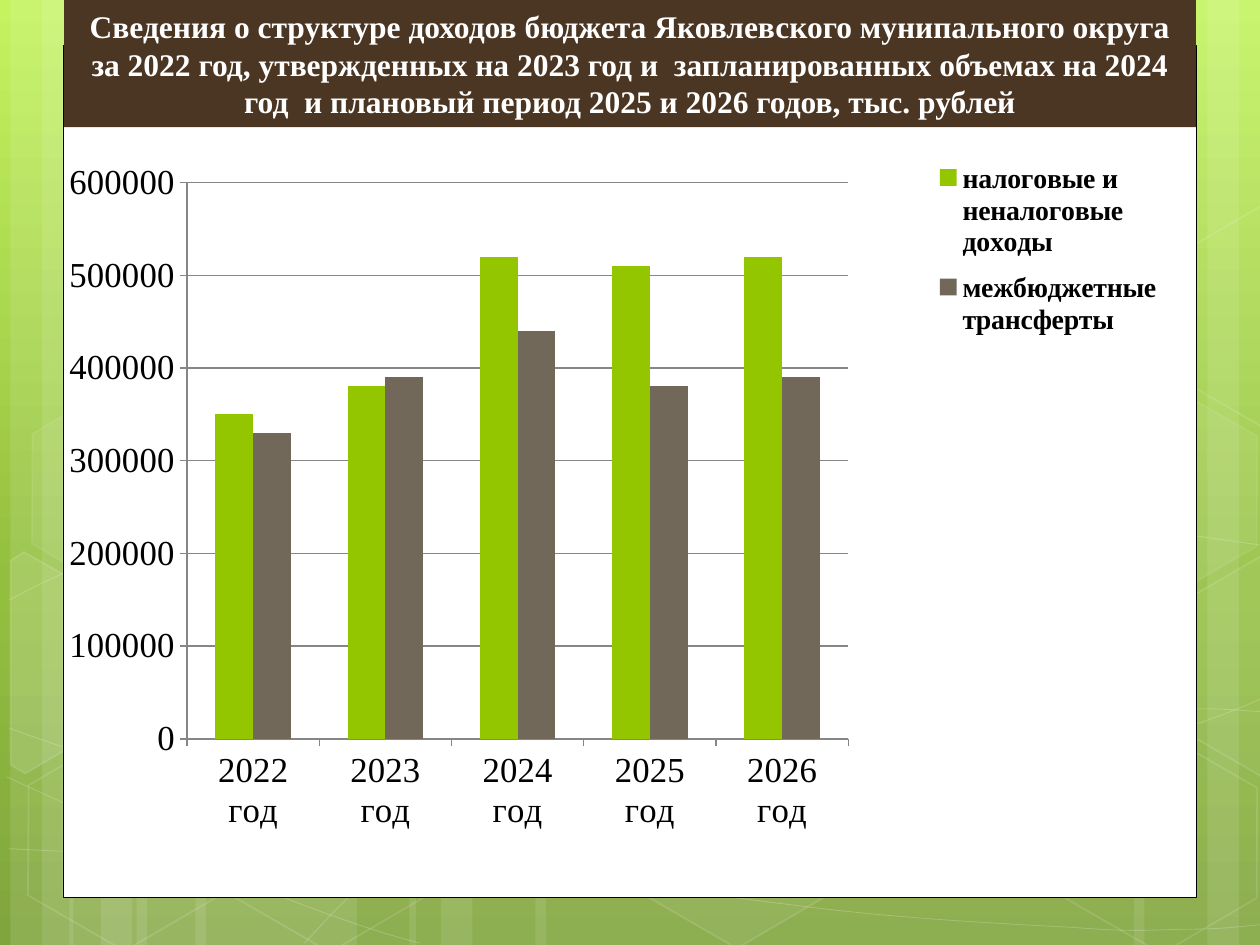
from copy import deepcopy

from lxml.etree import SubElement
from pptx import Presentation
from pptx.chart.data import CategoryChartData
from pptx.dml.color import RGBColor
from pptx.enum.chart import XL_CHART_TYPE, XL_LEGEND_POSITION, XL_TICK_MARK
from pptx.enum.shapes import MSO_SHAPE
from pptx.enum.text import MSO_ANCHOR, MSO_AUTO_SIZE, PP_ALIGN
from pptx.oxml import parse_xml
from pptx.oxml.ns import nsdecls, qn
from pptx.util import Pt

WHITE = RGBColor(0xFF, 0xFF, 0xFF)
BLACK = RGBColor(0x00, 0x00, 0x00)
BROWN = RGBColor(0x4A, 0x36, 0x22)
GREEN = RGBColor(0x94, 0xC6, 0x00)
TAUPE = RGBColor(0x71, 0x68, 0x5A)
GRID_GRAY = RGBColor(0x86, 0x86, 0x86)
GRADIENT = [
    (0, RGBColor(0xC3, 0xF3, 0x5F)),
    (0.62, RGBColor(0x93, 0xBF, 0x3F)),
    (1, RGBColor(0x81, 0xA5, 0x3E)),
]
SERIF = "Times New Roman"


def style_translucent(shape, fill_percent=0, line_percent=0, line_width=1):
    """Give a shape a see-through white fill and line; zero means none."""
    shape.shadow.inherit = False
    parts = ((shape.fill, fill_percent), (shape.line.fill, line_percent))
    for fill, percent in parts:
        if not percent:
            fill.background()
            continue
        fill.solid()
        fill.fore_color.rgb = WHITE
    if line_percent:
        shape.line.width = Pt(line_width)
    percents = [percent for _, percent in parts if percent]
    for color, percent in zip(shape._element.spPr.iter(qn("a:srgbClr")), percents):
        SubElement(color, qn("a:alpha")).set("val", str(percent * 1000))


def draw_outline(shapes, points, closed):
    """Draw a freeform through points given in points."""
    scaled = [(Pt(x), Pt(y)) for x, y in points]
    builder = shapes.build_freeform(*scaled[0])
    builder.add_line_segments(scaled[1:], close=closed)
    return builder.convert_to_shape()


presentation = Presentation()
presentation.slide_width, presentation.slide_height = Pt(720), Pt(540)
layout = presentation.slide_layouts[5]
slide = presentation.slides.add_slide(layout)
shapes = slide.shapes
title = shapes.title

# Background gradient, light at the top
background = slide.background.fill
background.gradient()
background.gradient_angle = 270
first_stop = background._fill._gradFill.gsLst[0]
first_stop.addnext(deepcopy(first_stop))
for stop, (position, color) in zip(background.gradient_stops, GRADIENT):
    stop.position = position
    stop.color.rgb = color

# Vertical light bands: left, width
for left, width in [
    (78, 126), (6, 36), (24, 60), (111.6, 126), (39.6, 36), (57.6, 60),
    (528, 126), (690, 36), (648, 60), (306, 222), (234, 36), (252, 60),
]:
    band = shapes.add_shape(MSO_SHAPE.RECTANGLE, Pt(left), 0, Pt(width), Pt(540))
    style_translucent(band, fill_percent=10)

# Sweeping curves: a start point, then two control points and an end per segment
curves = [
    [(5, 485), (44, 487), (83, 489), (137, 488), (191, 487), (258, 486),
     (330, 479), (402, 472), (504, 458), (570, 444), (636, 431), (703, 409), (725, 397)],
    [(5, 343), (26, 332), (47, 321), (87, 310), (128, 299), (186, 284),
     (250, 279), (314, 274), (392, 273), (471, 279), (550, 284), (682, 307), (725, 312)],
    [(4, 444), (91, 484), (178, 523), (240, 539)],
    [(5, 416), (27, 424), (50, 432), (92, 444), (134, 454), (197, 472),
     (257, 485), (317, 497), (392, 510), (452, 517), (512, 525), (576, 528),
     (614, 530), (652, 533), (662, 531), (680, 531), (699, 531), (712, 529), (725, 528)],
    [(174, 539), (187, 525), (200, 510), (217, 498), (235, 485), (259, 470),
     (279, 460), (300, 450), (312, 446), (338, 438), (364, 431), (413, 421),
     (438, 416), (464, 411), (467, 411), (490, 410), (512, 408), (547, 405),
     (572, 405), (597, 404), (638, 405), (638, 405), (654, 405), (670, 405),
     (686, 405), (699, 405), (711, 406), (724, 407)],
]
for nodes in curves:
    curve = draw_outline(shapes, nodes, False)
    style_translucent(curve, line_percent=20, line_width=0.5)
    # Turn every three line segments into one Bézier segment
    segments = list(curve._element.iter(qn("a:lnTo")))
    outline = segments[0].getparent()
    for start in range(0, len(segments), 3):
        bezier = SubElement(outline, qn("a:cubicBezTo"))
        for segment in segments[start:start + 3]:
            bezier.append(segment[0])
            outline.remove(segment)

# Hexagons: left, top, fill percent, line percent
for left, top, fill_percent, line_percent in [
    (357.8, 424, 6, 12), (7.9, 425.5, 0, 12), (10.1, 224.6, 7, 8),
    (125.3, 426.2, 0, 12), (600.5, 427, 0, 12), (600.5, 226, 7, 8),
]:
    hexagon = shapes.add_shape(MSO_SHAPE.HEXAGON, Pt(left), Pt(top), Pt(126), Pt(109.4))
    hexagon.adjustments[0] = 0.285
    hexagon.rotation = 30
    style_translucent(hexagon, fill_percent, line_percent)

# Hexagons cut off at the slide edges
right_cut = [(667, 349), (721, 317.5), (726.5, 321), (726.5, 441.5), (721.5, 444), (667, 412.5)]
for points, fill_percent in [
    ([(6, 320.4), (13.7, 315.4), (69, 347), (68.5, 410.4), (14.4, 442), (6, 437)], 10),
    (right_cut, 4),
    ([(x, y - 200) for x, y in right_cut], 0),
]:
    style_translucent(draw_outline(shapes, points, True), fill_percent, 12)

# White panel
panel = shapes.add_shape(MSO_SHAPE.RECTANGLE, Pt(36), Pt(26), Pt(648), Pt(487))
panel.shadow.inherit = False
panel.fill.solid()
panel.fill.fore_color.rgb = WHITE
panel.line.color.rgb = BLACK
panel.line.width = Pt(0.5)

# The decoration belongs to the layout, behind the slide's own content
for shape in list(shapes):
    if not shape.is_placeholder:
        layout.shapes._spTree.append(shape._element)

# Title
title.left, title.top, title.width, title.height = Pt(36.7), Pt(0), Pt(646.6), Pt(72.7)
title.fill.solid()
title.fill.fore_color.rgb = BROWN
title.text_frame.text = (
    "Сведения о структуре доходов бюджета Яковлевского мунипального округа "
    "за 2022 год, утвержденных на 2023 год и  запланированных объемах на 2024 год  "
    "и плановый период 2025 и 2026 годов, тыс. рублей"
)
title.text_frame.auto_size = MSO_AUTO_SIZE.NONE
title.text_frame.vertical_anchor = MSO_ANCHOR.MIDDLE
paragraph = title.text_frame.paragraphs[0]
paragraph.alignment = PP_ALIGN.CENTER
paragraph.font.color.rgb = WHITE

# Income chart
chart_data = CategoryChartData()
chart_data.categories = [f"{year} год" for year in range(2022, 2027)]
chart_data.add_series("налоговые и неналоговые доходы", (350000, 380000, 520000, 510000, 520000))
chart_data.add_series("межбюджетные трансферты", (330000, 390000, 440000, 380000, 390000))
chart = shapes.add_chart(
    XL_CHART_TYPE.COLUMN_CLUSTERED, Pt(39.6), Pt(74.9), Pt(646.6), Pt(439.2), chart_data
).chart
chart.has_title = False
chart.font.color.rgb = BLACK
plot = chart.plots[0]
plot.gap_width, plot.overlap, plot.vary_by_categories = 150, 0, False
for series, color in zip(plot.series, (GREEN, TAUPE)):
    series.format.fill.solid()
    series.format.fill.fore_color.rgb = color

# Axes and legend
value_axis, category_axis = chart.value_axis, chart.category_axis
value_axis.minimum_scale, value_axis.maximum_scale = 0, 600000
value_axis.major_unit = 100000
for axis in (value_axis, category_axis):
    axis.major_tick_mark = XL_TICK_MARK.OUTSIDE
for line in (value_axis.format.line, category_axis.format.line,
             value_axis.major_gridlines.format.line):
    line.color.rgb = GRID_GRAY
    line.width = Pt(0.75)
chart.has_legend = True
legend = chart.legend
legend.position = XL_LEGEND_POSITION.RIGHT
legend.include_in_layout = False

# Fonts
for font, values in [
    (paragraph.font, {"name": SERIF, "size": Pt(18), "bold": True}),
    (chart.font, {"name": "Quicksand", "size": Pt(18)}),
    (value_axis.tick_labels.font, {"name": SERIF, "size": Pt(20)}),
    (category_axis.tick_labels.font, {"name": SERIF, "size": Pt(20)}),
    (legend.font, {"name": SERIF, "size": Pt(16), "bold": True}),
]:
    for name, value in values.items():
        setattr(font, name, value)

# Fixed places of the plot and the legend, in percent of the chart
plot_area = chart._chartSpace.chart.plotArea
for parent, index, target, box in [
    (plot_area, 0, '<c:layoutTarget val="inner"/>', (9.7, 6.7, 58.9, 72.4)),
    (legend._element, 1, "", (75.4, 2.3, 22, 26.3)),
]:
    for old_layout in parent.findall(qn("c:layout")):
        parent.remove(old_layout)
    modes = "".join(f'<c:{side}Mode val="edge"/>' for side in "xy")
    sizes = "".join(f'<c:{side} val="{percent / 100:.3f}"/>' for side, percent in zip("xywh", box))
    parent.insert(index, parse_xml(
        f'<c:layout {nsdecls("c")}><c:manualLayout>{target}{modes}{sizes}</c:manualLayout></c:layout>'
    ))

presentation.save("out.pptx")
